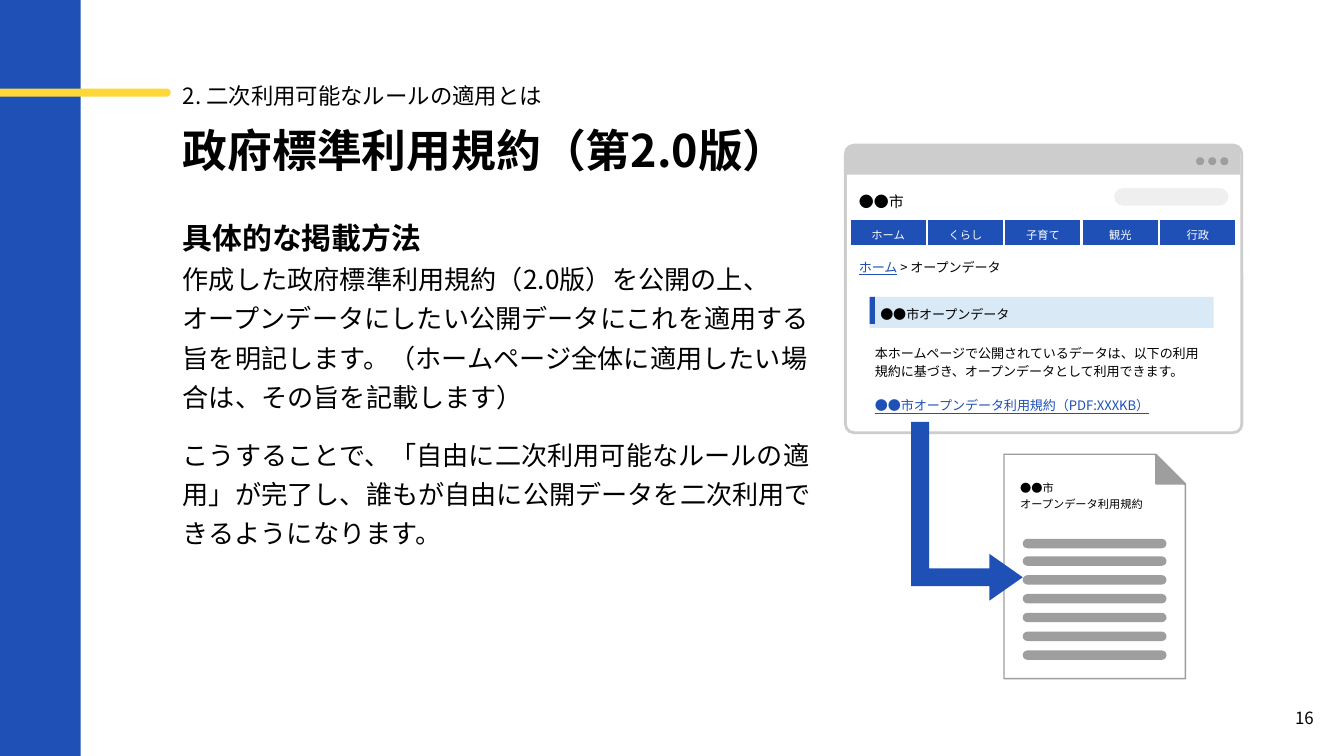
import pptx
import pptx.dml.color
import pptx.enum.shapes
import pptx.enum.text
import pptx.oxml
import pptx.oxml.ns
import pptx.util

RGBColor = pptx.dml.color.RGBColor
SHAPE = pptx.enum.shapes.MSO_SHAPE
ALIGN = pptx.enum.text.PP_ALIGN
ANCHOR = pptx.enum.text.MSO_ANCHOR
Pt = pptx.util.Pt

PX = 9144  # 100 px to the inch
FONT = "Noto Sans CJK JP"
BLUE = RGBColor(0x1E, 0x50, 0xB5)
YELLOW = RGBColor(0xFF, 0xD7, 0x37)
SKY = RGBColor(0x00, 0x70, 0xC0)
BLACK = RGBColor(0x00, 0x00, 0x00)
WHITE = RGBColor(0xFF, 0xFF, 0xFF)
GRAY = RGBColor(0x9E, 0x9E, 0x9E)
FRAME_GRAY = RGBColor(0xCD, 0xCD, 0xCD)
PALE_GRAY = RGBColor(0xEF, 0xEF, 0xEF)

# Widescreen 16:9 slide
presentation = pptx.Presentation()
presentation.slide_width = 1000 * PX
presentation.slide_height = 1000 * PX * 9 // 16
slide = presentation.slides.add_slide(presentation.slide_layouts[5])


def add_shape(kind, box, fill, line=None, line_width=0, adjustments=()):
    shape = slide.shapes.add_shape(kind, *[value * PX for value in box])
    shape.shadow.inherit = False
    shape.fill.solid()
    shape.fill.fore_color.rgb = fill
    if line is None:
        shape.line.fill.background()
    else:
        shape.line.color.rgb = line
        shape.line.width = Pt(line_width)
    for index, value in enumerate(adjustments):
        shape.adjustments[index] = value
    return shape


def write(paragraph, text, size, color=BLACK, spacing=1.0, align=ALIGN.LEFT, bold=False):
    paragraph.text = text
    paragraph.alignment = align
    paragraph.line_spacing = spacing
    font = paragraph.font
    font.size = Pt(size)
    font.bold = bold
    font.color.rgb = color
    font.name = FONT
    properties = paragraph._p.pPr.find(pptx.oxml.ns.qn("a:defRPr"))
    east_asian = pptx.oxml.parse_xml(
        f'<a:ea {pptx.oxml.ns.nsdecls("a")} typeface="{FONT}"/>')
    properties.find(pptx.oxml.ns.qn("a:latin")).addnext(east_asian)


# Side band and accent line
band = add_shape(SHAPE.RECTANGLE, (0, 0, 60, 562), BLUE)
band.height = presentation.slide_height
add_shape(SHAPE.ROUNDED_RECTANGLE, (-11, 66, 138, 6), YELLOW, adjustments=[0.5])

# Title
title = slide.shapes.title
title.left, title.top, title.width, title.height = [v * PX for v in (136, 91, 787, 40)]
title_frame = title.text_frame
title_frame.auto_size = pptx.enum.text.MSO_AUTO_SIZE.NONE
title_frame.vertical_anchor = ANCHOR.TOP
title_frame.margin_left = title_frame.margin_right = 0
title_frame.margin_top = title_frame.margin_bottom = 0
write(title_frame.paragraphs[0], "政府標準利用規約（第2.0版）", 24, bold=True)

# Browser window
add_shape(SHAPE.ROUNDED_RECTANGLE, (629, 108, 295, 214), WHITE, FRAME_GRAY, 1.5, [0.03])
add_shape(SHAPE.ROUND_2_SAME_RECTANGLE, (629, 108, 294, 22), FRAME_GRAY, adjustments=[0.26, 0])
for column in range(3):
    add_shape(SHAPE.OVAL, (890 + 9 * column, 117, 6, 6), GRAY)
add_shape(SHAPE.ROUNDED_RECTANGLE, (829, 140, 85, 13), PALE_GRAY, adjustments=[0.5])

# Site menu
menu = ["ホーム", "くらし", "子育て", "観光", "行政"]
menu_table = slide.shapes.add_table(1, len(menu), 632 * PX, 163 * PX, 288 * PX, 20 * PX).table
for column, label in enumerate(menu):
    cell = menu_table.cell(0, column)
    cell.margin_left = cell.margin_right = cell.margin_top = cell.margin_bottom = 0
    cell.vertical_anchor = ANCHOR.MIDDLE
    write(cell.text_frame.paragraphs[0], label, 6, WHITE, 1.25, ALIGN.CENTER)
    cell_properties = cell._tc.get_or_add_tcPr()
    for side in ("lnL", "lnR", "lnT", "lnB"):
        cell_properties.append(pptx.oxml.parse_xml(
            f'<a:{side} {pptx.oxml.ns.nsdecls("a")} w="{Pt(1.5)}">'
            f'<a:solidFill><a:srgbClr val="{WHITE}"/></a:solidFill></a:{side}>'))
    cell.fill.solid()
    cell.fill.fore_color.rgb = BLUE

# Open data heading
heading = add_shape(SHAPE.RECTANGLE, (647, 221, 256, 23), SKY)
heading_color = heading.fill._xPr.find(".//" + pptx.oxml.ns.qn("a:srgbClr"))
heading_color.append(pptx.oxml.parse_xml(
    f'<a:alpha {pptx.oxml.ns.nsdecls("a")} val="15000"/>'))
heading_frame = heading.text_frame
heading_frame.vertical_anchor = ANCHOR.TOP
heading_frame.margin_left = heading_frame.margin_right = 8 * PX
heading_frame.margin_top = heading_frame.margin_bottom = 4 * PX
write(heading_frame.paragraphs[0], "●●市オープンデータ", 7, spacing=1.25)
add_shape(SHAPE.RECTANGLE, (647, 221, 4, 20), BLUE)

# Terms document
add_shape(SHAPE.SNIP_1_RECTANGLE, (747, 338, 135, 167), WHITE, GRAY, 0.75, [0.17])
add_shape(SHAPE.RIGHT_TRIANGLE, (860, 338, 22, 22), GRAY, GRAY, 0.75)
for row in range(7):
    add_shape(SHAPE.ROUNDED_RECTANGLE, (761, 401 + 83 * row // 6, 107, 7), GRAY,
              adjustments=[0.5])

# Text boxes: box, inset, line spacing, anchor, alignment, (text, size, bold) per paragraph
body = [
    ("具体的な掲載方法", 16, True),
    ("作成した政府標準利用規約（2.0版）を公開の上、オープンデータにしたい公開データに"
     "これを適用する旨を明記します。（ホームページ全体に適用したい場合は、その旨を記載します）", 14, False),
    ("こうすることで、「自由に二次利用可能なルールの適用」が完了し、"
     "誰もが自由に公開データを二次利用できるようになります。", 14, False),
]
notice = "本ホームページで公開されているデータは、以下の利用規約に基づき、オープンデータとして利用できます。"
text_boxes = {
    "section": ((136, 55, 787, 27), 0, 1.25, ANCHOR.MIDDLE, ALIGN.LEFT,
                [("2. 二次利用可能なルールの適用とは", 12, False)]),
    "body": ((136, 157, 472, 254), 0, 1.25, ANCHOR.TOP, ALIGN.LEFT, body),
    "page": ((949, 513, 43, 43), 0, 1.0, ANCHOR.MIDDLE, ALIGN.CENTER, [("16", 9, False)]),
    "city": ((639, 140, 49, 17), 0, 1.25, ANCHOR.TOP, ALIGN.LEFT, [("●●市", 8, False)]),
    "breadcrumb": ((639, 193, 158, 12), 0, 1.0, ANCHOR.TOP, ALIGN.LEFT, [("ホーム", 7, False)]),
    "notice": ((647, 251, 256, 35), 4, 1.15, ANCHOR.TOP, ALIGN.LEFT, [(notice, 7, False)]),
    "link": ((651, 296, 256, 12), 0, 1.0, ANCHOR.TOP, ALIGN.LEFT,
             [("●●市オープンデータ利用規約（PDF:XXXKB）", 7, False)]),
    "terms": ((759, 357, 115, 23), 0, 1.15, ANCHOR.TOP, ALIGN.LEFT,
              [("●●市\vオープンデータ利用規約", 6, False)]),
}
frames = {}
for name, (box, inset, spacing, anchor, align, paragraphs) in text_boxes.items():
    frame = slide.shapes.add_textbox(*[value * PX for value in box]).text_frame
    frame.word_wrap = True
    frame.vertical_anchor = anchor
    frame.margin_left = frame.margin_right = inset * PX
    frame.margin_top = frame.margin_bottom = inset * PX
    for index, (text, size, bold) in enumerate(paragraphs):
        paragraph = frame.add_paragraph() if index else frame.paragraphs[0]
        write(paragraph, text, size, BLACK, spacing, align, bold)
    frames[name] = frame
frames["body"].paragraphs[2].space_before = Pt(10)

# Link styling
for name in ("breadcrumb", "link"):
    link_font = frames[name].paragraphs[0].runs[0].font
    link_font.color.rgb = BLUE
    link_font.underline = True
frames["breadcrumb"].paragraphs[0].add_run().text = " > オープンデータ"

# Arrow from the link to the document
arrow = add_shape(SHAPE.BENT_UP_ARROW, (653, 339, 133, 83), BLUE,
                  adjustments=[0.16, 0.21, 0.3])
arrow.rotation = 90

presentation.save("out.pptx")
